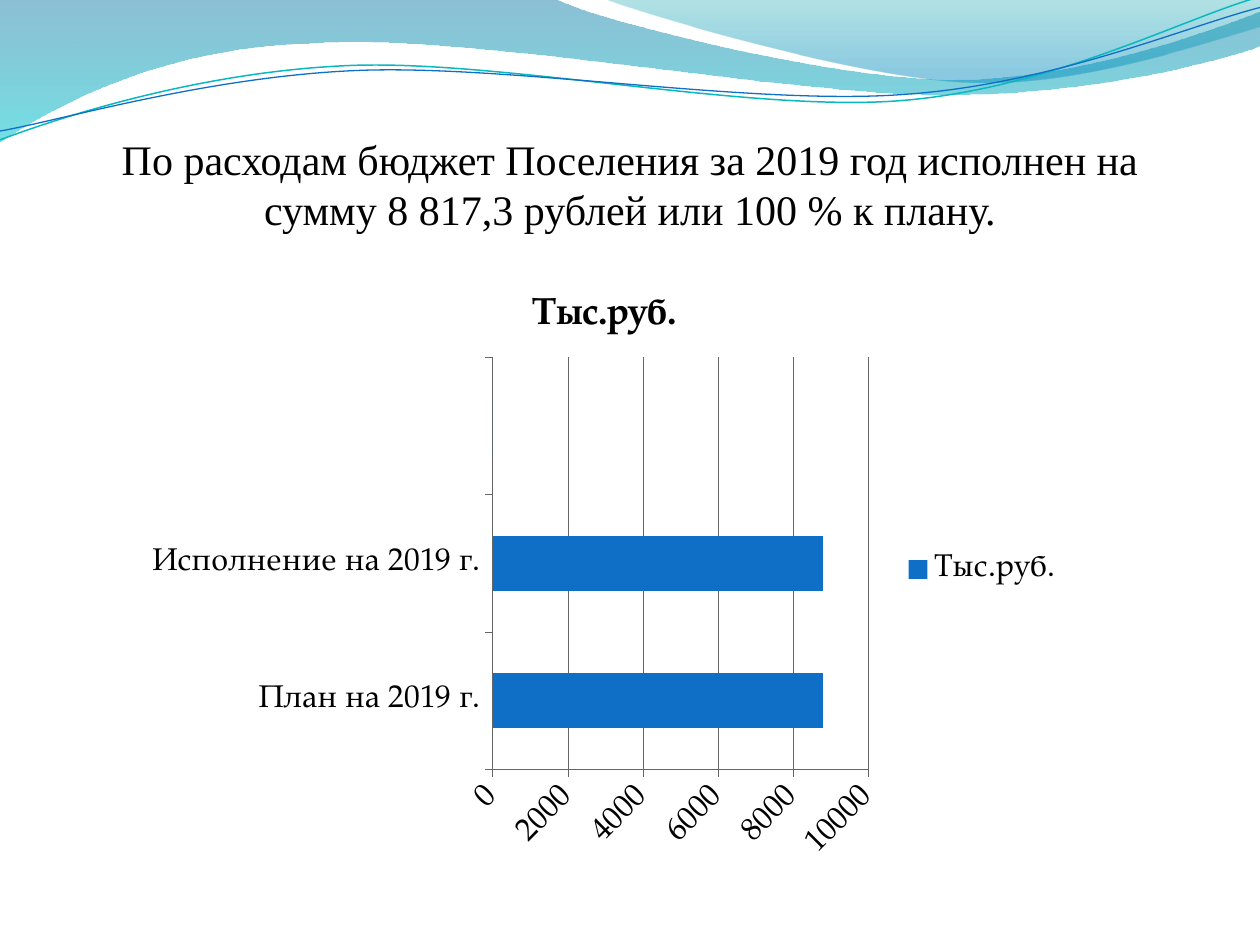
import math
from dataclasses import dataclass

from lxml import etree
from pptx import Presentation
from pptx.chart.data import CategoryChartData
from pptx.dml.color import RGBColor
from pptx.enum import chart as ch, text
from pptx.oxml.ns import qn
from pptx.util import Inches, Pt

BODY_FONT = "TeX Gyre Pagella"
LINE_TILT = 357.3


@dataclass
class Stop:
    position: float
    color: str
    opacity: int


@dataclass
class Wave:
    """A start point, then segments of one point (line) or three (Bezier curve)."""
    start: tuple
    segments: list
    stops: tuple = ()
    line: str = ""
    width: float = 0
    center: tuple = ()


WAVES = [
    Wave((0, 0), [
        [(4.4, -0.01)],
        [(4.76, 0.17), (6.64, 0.63), (7.58, 0.63)],
        [(8.53, 0.63), (9.58, 0.26), (10, 0.09)],
        [(10.01, 0.36)],
        [(9.83, 0.44), (8.7, 0.76), (7.46, 0.75)],
        [(6.22, 0.75), (3.82, 0.28), (2.57, 0.34)],
        [(1.29, 0.36), (0.46, 0.83), (-0.01, 1.13)],
    ], stops=(Stop(0, "0074A1", 45), Stop(1, "00C6CF", 55))),
    Wave((4.79, -0.01), [
        [(5.09, 0.11), (6.82, 0.62), (7.69, 0.65)],
        [(8.56, 0.69), (9.61, 0.32), (10, 0.21)],
        [(10, 0)],
    ], stops=(Stop(0, "00A1A9", 30), Stop(0.8, "008BBF", 45))),
    Wave((0, 1.11), [
        [(0.48, 0.93), (1.58, 0.57), (2.77, 0.52)],
        [(3.95, 0.47), (5.93, 0.89), (7.13, 0.8)],
        [(8.33, 0.71), (9.38, 0.15), (9.98, -0.02)],
    ], line="0AB8BF", width=0.85, center=(4.99, 0.58)),
    Wave((0, 1.04), [
        [(0.47, 0.96), (1.64, 0.61), (2.83, 0.56)],
        [(4.03, 0.51), (5.97, 0.84), (7.17, 0.75)],
        [(8.36, 0.67), (9.41, 0.21), (10, 0.06)],
    ], line="0F6FC6", width=0.75, center=(5, 0.59)),
]


def rgb(color: str) -> RGBColor:
    return RGBColor.from_string(color)


def untilt(point: tuple, center: tuple) -> tuple:
    """Turn a point back, so that the tilt of the shape brings it into place."""
    angle = math.radians(-LINE_TILT)
    dx, dy = point[0] - center[0], point[1] - center[1]
    return (center[0] + dx * math.cos(angle) - dy * math.sin(angle),
            center[1] + dx * math.sin(angle) + dy * math.cos(angle))


def bend(sp, segments: list) -> None:
    """Join the three straight steps of each curved segment into one Bezier curve."""
    steps = iter(list(sp._element.iter(qn("a:lnTo"))))
    for segment in segments:
        parts = [next(steps) for _ in segment]
        if len(parts) == 3:
            curve = etree.Element(qn("a:cubicBezTo"))
            parts[0].addprevious(curve)
            for part in parts:
                curve.append(part[0])
                part.getparent().remove(part)


def draw_wave(s, wave: Wave) -> None:
    points = [wave.start] + [p for segment in wave.segments for p in segment]
    if wave.center:
        points = [untilt(p, wave.center) for p in points]
    start, *rest = [(Inches(x), Inches(y)) for x, y in points]
    builder = s.shapes.build_freeform(*start)
    builder.add_line_segments(rest, close=bool(wave.stops))
    sp = builder.convert_to_shape()
    bend(sp, wave.segments)
    sp.shadow.inherit = False
    if not wave.stops:
        sp.rotation = LINE_TILT
        sp.fill.background()
        sp.line.color.rgb = rgb(wave.line)
        sp.line.width = Pt(wave.width)
        return
    sp.line.fill.background()
    sp.fill.gradient()
    sp.fill.gradient_angle = 270
    for target, stop in zip(sp.fill.gradient_stops, wave.stops):
        target.position = stop.position
        target.color.rgb = rgb(stop.color)
    for clr, stop in zip(sp._element.spPr.iter(qn("a:srgbClr")), wave.stops):
        etree.SubElement(clr, qn("a:alpha"), val=str(stop.opacity * 1000))


def set_title(s, words: str) -> None:
    title = s.shapes.title
    title.left, title.top = Inches(0.5), Inches(0.92)
    title.width, title.height = Inches(9), Inches(0.94)
    tf = title.text_frame
    tf.text = words
    tf.word_wrap = True
    tf.auto_size = text.MSO_AUTO_SIZE.NONE
    tf.vertical_anchor = text.MSO_ANCHOR.BOTTOM
    tf.margin_left = tf.margin_right = tf.margin_bottom = 0
    tf.margin_top = Inches(0.05)
    p = tf.paragraphs[0]
    p.alignment = text.PP_ALIGN.CENTER
    p.font.name = "Times New Roman"
    p.font.size = Pt(24)
    p.font.color.rgb = rgb("000000")


def add_budget_chart(s) -> None:
    data = CategoryChartData()
    data.categories = ["План на 2019 г.", "Исполнение на 2019 г.", ""]
    data.add_series("Тыс.руб.", (8800, 8800, 0))
    chart = s.shapes.add_chart(ch.XL_CHART_TYPE.BAR_STACKED, Inches(1.06), Inches(2.12),
                               Inches(7.48), Inches(4.8), data).chart
    # The third category has no label at all
    for pt in chart._chartSpace.xpath(".//c:cat//c:pt[@idx='2']"):
        pt.getparent().remove(pt)
    chart.font.name = BODY_FONT
    chart.font.size = Pt(18)
    chart.font.color.rgb = rgb("000000")

    chart.has_title = True
    chart.chart_title.include_in_layout = False
    chart.chart_title.text_frame.text = "Тыс.руб."
    font = chart.chart_title.text_frame.paragraphs[0].font
    font.name, font.size, font.bold = BODY_FONT, Pt(21.6), True
    font.color.rgb = rgb("000000")

    chart.has_legend = True
    chart.legend.position = ch.XL_LEGEND_POSITION.RIGHT
    chart.legend.include_in_layout = False

    plot = chart.plots[0]
    plot.gap_width, plot.overlap = 150, 100
    plot.vary_by_categories = False
    fill = plot.series[0].format.fill
    fill.solid()
    fill.fore_color.rgb = rgb("0F6FC6")

    values = chart.value_axis
    values.minimum_scale, values.maximum_scale, values.major_unit = 0, 10000, 2000
    values.has_major_gridlines = True
    for axis in (chart.category_axis, values):
        axis.major_tick_mark = ch.XL_TICK_MARK.OUTSIDE
    for part in (chart.category_axis, values, values.major_gridlines):
        part.format.line.color.rgb = rgb("666666")
        part.format.line.width = Pt(0.5)


def main() -> None:
    prs = Presentation()
    prs.slide_width, prs.slide_height = Inches(10), Inches(7.5)
    s = prs.slides.add_slide(prs.slide_layouts[5])
    for wave in WAVES:
        draw_wave(s, wave)
    set_title(s, "По расходам бюджет Поселения за 2019 год исполнен на "
                 "сумму 8 817,3 рублей или 100 % к плану.")
    add_budget_chart(s)
    prs.save("out.pptx")


if __name__ == "__main__":
    main()
